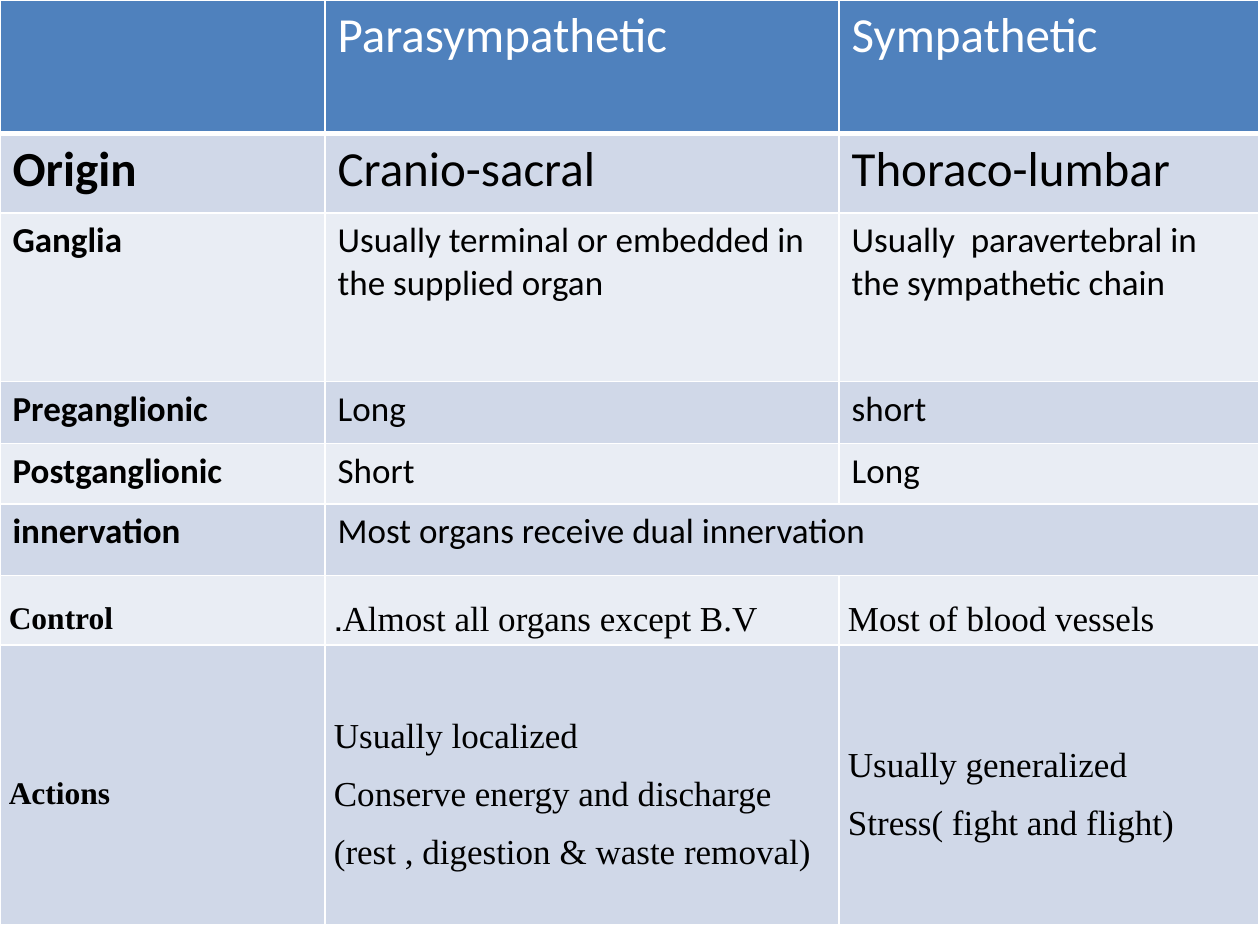
"""Builds a slide comparing the parasympathetic and sympathetic systems."""
from pptx import Presentation, util as u
from pptx.dml.color import RGBColor
from pptx.enum import text
from pptx.oxml import parse_xml
from pptx.oxml.ns import nsdecls

WHITE = RGBColor(0xFF, 0xFF, 0xFF)
BLACK = RGBColor(0x00, 0x00, 0x00)
HEADER_BLUE = RGBColor(0x4F, 0x81, 0xBD)
BANDS = (RGBColor(0xE9, 0xED, 0xF4), RGBColor(0xD0, 0xD8, 0xE8))

COLUMN_WIDTHS = (2.58, 4.08, 3.33)
ROW_HEIGHTS = (1.06, 0.63, 1.34, 0.49, 0.48, 0.57, 0.55, 2.22)
TITLE_ROWS = 2
SPACED_FROM = 6
INNERVATION = 5

COMPARISON = (
    ("", "Parasympathetic", "Sympathetic"),
    ("Origin", "Cranio-sacral", "Thoraco-lumbar"),
    ("Ganglia", "Usually terminal or embedded in the supplied organ",
     "Usually  paravertebral in the sympathetic chain"),
    ("Preganglionic", "Long", "short"),
    ("Postganglionic", "Short", "Long"),
    ("innervation", "Most organs receive dual innervation", ""),
    ("Control", "Almost all organs except B.V.", "Most of blood vessels"),
    ("Actions",
     "Usually localized\n"
     "Conserve energy and discharge (rest , digestion & waste removal)",
     "Usually generalized\nStress( fight and flight)"),
)


def font_size(row, column):
    """Return the text size in points for a place in the table."""
    if row < TITLE_ROWS:
        return 28
    return 18 if row >= SPACED_FROM and column == 0 else 20


def set_borders(cell, bottom_width):
    """Draw white lines round a cell, with a chosen width at the bottom."""
    properties = cell._tc.get_or_add_tcPr()
    widths = {"lnL": 1, "lnR": 1, "lnT": 1, "lnB": bottom_width}
    for position, (side, width) in enumerate(widths.items()):
        properties.insert(position, parse_xml(
            f'<a:{side} {nsdecls("a")} w="{u.Pt(width)}"><a:solidFill>'
            f'<a:srgbClr val="{WHITE}"/></a:solidFill></a:{side}>'))


def space_out(cell):
    """Centre a cell vertically and set its lines right-to-left and open."""
    cell.vertical_anchor = text.MSO_ANCHOR.MIDDLE
    cell.margin_left = cell.margin_right = u.Inches(0.07)
    cell.margin_top = cell.margin_bottom = 0
    for line in cell.text_frame.paragraphs:
        line.line_spacing = 1.5
        line.alignment = text.PP_ALIGN.LEFT
        line._p.get_or_add_pPr().set("rtl", "1")


def fill_cell(cell, row, column, wording):
    """Write and style one cell according to its row and column."""
    cell.text = wording
    cell.fill.solid()
    cell.fill.fore_color.rgb = BANDS[row % 2] if row else HEADER_BLUE
    set_borders(cell, 1 if row else 3)
    for line in cell.text_frame.paragraphs:
        line.font.name = "Times New Roman" if row >= SPACED_FROM else "Calibri"
        line.font.size = u.Pt(font_size(row, column))
        line.font.bold = row > 0 and column == 0
        line.font.color.rgb = BLACK if row else WHITE
    if row >= SPACED_FROM:
        space_out(cell)


def add_comparison(slide):
    """Add the comparison table across the whole slide."""
    table = slide.shapes.add_table(
        len(ROW_HEIGHTS), len(COLUMN_WIDTHS), 0, 0,
        u.Inches(sum(COLUMN_WIDTHS)), u.Inches(sum(ROW_HEIGHTS))).table
    table.first_row = table.horz_banding = False
    for column, width in zip(table.columns, COLUMN_WIDTHS):
        column.width = u.Inches(width)
    for row, height in zip(table.rows, ROW_HEIGHTS):
        row.height = u.Inches(height)
    for row, entries in enumerate(COMPARISON):
        for column, wording in enumerate(entries):
            fill_cell(table.cell(row, column), row, column, wording)
    table.cell(INNERVATION, 1).merge(table.cell(INNERVATION, 2))


def main():
    """Build the slide and save it."""
    deck = Presentation()
    deck.slide_width, deck.slide_height = u.Inches(10), u.Inches(7.5)
    add_comparison(deck.slides.add_slide(deck.slide_layouts[6]))
    deck.save("out.pptx")


if __name__ == "__main__":
    main()
